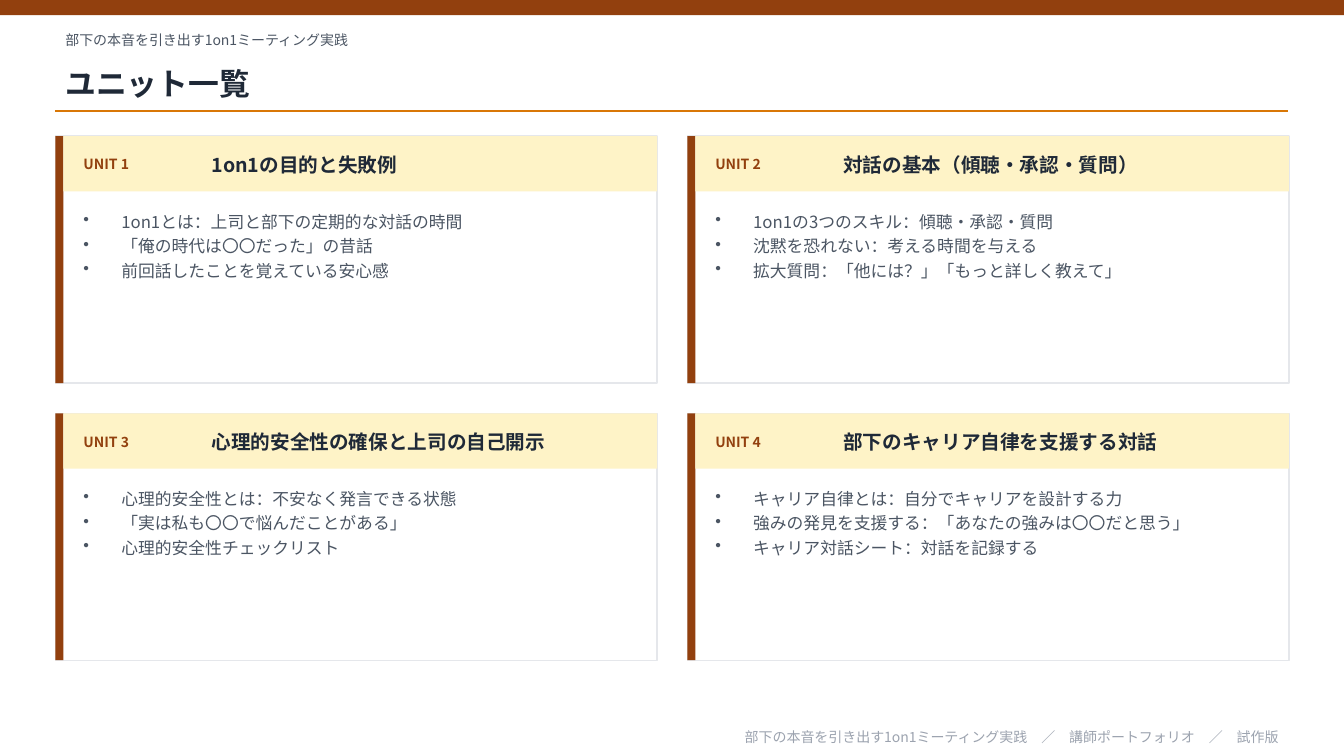
"""Build the unit overview slide of a 1on1 meeting course."""
import lxml.etree
import pptx
import pptx.dml.color
import pptx.enum.shapes
import pptx.enum.text
import pptx.oxml.ns
import pptx.util

Pt = pptx.util.Pt
RGBColor = pptx.dml.color.RGBColor
Align = pptx.enum.text.PP_ALIGN
Anchor = pptx.enum.text.MSO_ANCHOR
qn = pptx.oxml.ns.qn

BROWN = RGBColor(0x92, 0x40, 0x0E)
AMBER = RGBColor(0xD9, 0x77, 0x06)
CREAM = RGBColor(0xFE, 0xF3, 0xC7)
WHITE = RGBColor(0xFF, 0xFF, 0xFF)
BORDER = RGBColor(0xE5, 0xE7, 0xEB)
INK = RGBColor(0x1F, 0x29, 0x37)
SLATE = RGBColor(0x4B, 0x55, 0x63)
MUTED = RGBColor(0x9C, 0xA3, 0xAF)

PAGE_WIDTH, PAGE_HEIGHT = 960, 540
MARGIN, CONTENT_WIDTH = 39.6, 880.56
CARD_WIDTH, CARD_HEIGHT = 429.84, 176.4
CARD_TOP, COLUMN_STEP, ROW_STEP = 97.2, 451.3, 198
ACCENT_WIDTH, HEADER_HEIGHT = 5.76, 39.6

COURSE = "部下の本音を引き出す1on1ミーティング実践"
UNITS = [
    ("1on1の目的と失敗例", [
        "1on1とは：上司と部下の定期的な対話の時間",
        "「俺の時代は〇〇だった」の昔話",
        "前回話したことを覚えている安心感"]),
    ("対話の基本（傾聴・承認・質問）", [
        "1on1の3つのスキル：傾聴・承認・質問",
        "沈黙を恐れない：考える時間を与える",
        "拡大質問：「他には？」「もっと詳しく教えて」"]),
    ("心理的安全性の確保と上司の自己開示", [
        "心理的安全性とは：不安なく発言できる状態",
        "「実は私も〇〇で悩んだことがある」",
        "心理的安全性チェックリスト"]),
    ("部下のキャリア自律を支援する対話", [
        "キャリア自律とは：自分でキャリアを設計する力",
        "強みの発見を支援する：「あなたの強みは〇〇だと思う」",
        "キャリア対話シート：対話を記録する"]),
]


class SlideBuilder:
    font_name = "Noto Sans CJK JP"

    def __init__(self, page):
        self.page = page

    def add_span(self, para, text, size, color, bold=False):
        span = para.add_run()
        span.text = text
        span.font.size = Pt(size)
        span.font.bold = bold
        span.font.color.rgb = color
        span.font.name = self.font_name
        east_asian = lxml.etree.SubElement(span.font._element, qn("a:ea"))
        east_asian.set("typeface", self.font_name)

    def title(self, left, top, width, height, text, size, color):
        box = self.page.shapes.title
        box.left, box.top, box.width, box.height = map(Pt, (left, top, width, height))
        frame = box.text_frame
        frame.auto_size = pptx.enum.text.MSO_AUTO_SIZE.NONE
        frame.vertical_anchor = Anchor.MIDDLE
        frame.paragraphs[0].alignment = Align.LEFT
        self.add_span(frame.paragraphs[0], text, size, color, bold=True)

    def text_frame(self, left, top, width, height, anchor):
        box = self.page.shapes.add_textbox(*map(Pt, (left, top, width, height)))
        box.text_frame.word_wrap = True
        box.text_frame.vertical_anchor = anchor
        return box.text_frame

    def label(self, left, top, width, height, text, size, color,
              bold=False, align=Align.LEFT):
        para = self.text_frame(left, top, width, height, Anchor.MIDDLE).paragraphs[0]
        para.alignment = align
        self.add_span(para, text, size, color, bold)

    def bullets(self, left, top, width, height, items, size, color):
        frame = self.text_frame(left, top, width, height, Anchor.TOP)
        for index, item in enumerate(items):
            para = frame.add_paragraph() if index else frame.paragraphs[0]
            properties = para._p.get_or_add_pPr()
            properties.set("marL", str(Pt(27)))
            properties.set("indent", str(Pt(-27)))
            lxml.etree.SubElement(properties, qn("a:buChar")).set("char", "•")
            para.space_after = Pt(3)
            self.add_span(para, item, size, color)

    def rectangle(self, left, top, width, height, fill, border=None):
        shape = self.page.shapes.add_shape(
            pptx.enum.shapes.MSO_SHAPE.RECTANGLE, *map(Pt, (left, top, width, height)))
        shape.shadow.inherit = False
        shape.fill.solid()
        shape.fill.fore_color.rgb = fill
        if border is None:
            shape.line.fill.background()
        else:
            shape.line.color.rgb = border
            shape.line.width = Pt(1)

    def rule(self, left, top, width, color):
        line = self.page.shapes.add_connector(
            pptx.enum.shapes.MSO_CONNECTOR.STRAIGHT,
            *map(Pt, (left, top, left + width, top)))
        line.line.color.rgb = color
        line.line.width = Pt(1)
        lxml.etree.SubElement(line._element.spPr, qn("a:effectLst"))

    def unit_card(self, left, top, number, heading, items):
        inner = left + ACCENT_WIDTH
        self.rectangle(left, top, CARD_WIDTH, CARD_HEIGHT, WHITE, BORDER)
        self.rectangle(left, top, ACCENT_WIDTH, CARD_HEIGHT, BROWN)
        self.rectangle(inner, top, CARD_WIDTH - ACCENT_WIDTH, HEADER_HEIGHT, CREAM)
        self.label(inner + 7.2, top + 5.76, 86.4, 28.8, f"UNIT {number}", 10, BROWN, True)
        self.label(left + 104.4, top + 5.76, 314.64, 28.8, heading, 14, INK, True)
        self.bullets(inner + 7.2, top + 50.4, 403.92, 115.2, items, 12, SLATE)


def main():
    deck = pptx.Presentation()
    deck.slide_width, deck.slide_height = Pt(PAGE_WIDTH), Pt(PAGE_HEIGHT)
    builder = SlideBuilder(deck.slides.add_slide(deck.slide_layouts[5]))

    builder.rectangle(0, 0, PAGE_WIDTH, 10.8, BROWN)
    builder.label(MARGIN, 18, CONTENT_WIDTH, 21.6, COURSE, 10, SLATE)
    builder.title(MARGIN, 39.6, CONTENT_WIDTH, 39.6, "ユニット一覧", 22, INK)
    builder.rule(MARGIN, 79.2, CONTENT_WIDTH, AMBER)

    for index, (heading, items) in enumerate(UNITS):
        row, column = divmod(index, 2)
        builder.unit_card(MARGIN + column * COLUMN_STEP, CARD_TOP + row * ROW_STEP,
                          index + 1, heading, items)

    builder.label(MARGIN, 518.4, CONTENT_WIDTH, 15.84,
                  f"{COURSE}　／　講師ポートフォリオ　／　試作版", 10, MUTED, align=Align.RIGHT)
    deck.save("out.pptx")


if __name__ == "__main__":
    main()
